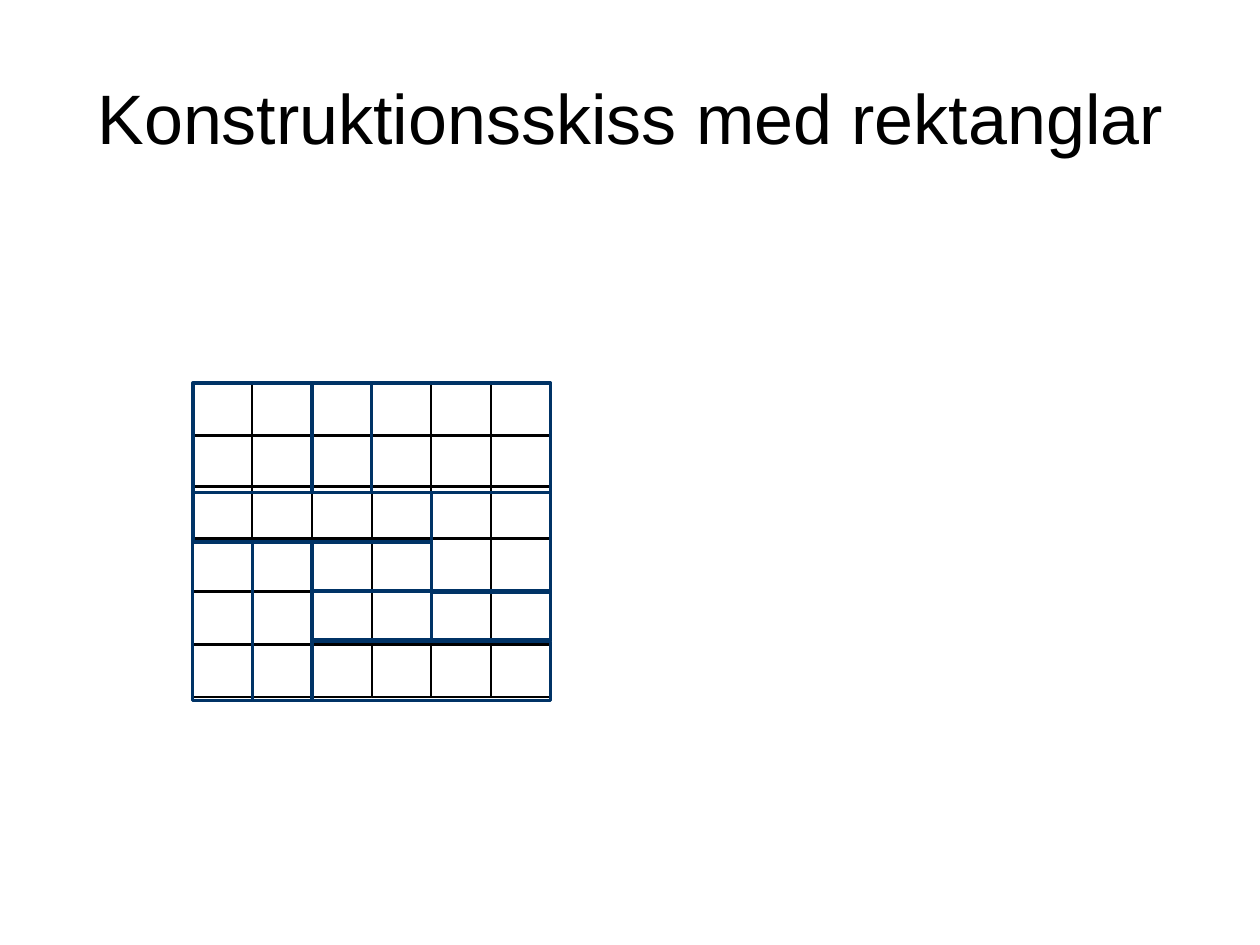
from pptx import Presentation
from pptx.dml.color import RGBColor
from pptx.enum import shapes, text
from pptx.util import Inches, Pt

LEFT = 1.53
COLUMNS = 6
COLUMN_WIDTH = 2.84 / COLUMNS
CELL_HEIGHT = 0.41
CELL_TOPS = (3.04, 3.46, 3.86, 4.28, 4.7, 5.12)

# first column, columns spanned, top, height
RECTANGLES = (
    (0, 2, 3.04, 0.87),
    (0, 4, 3.91, 0.39),
    (3, 3, 3.04, 0.87),
    (2, 1, 3.04, 0.87),
    (1, 1, 4.3, 1.26),
    (2, 4, 5.09, 0.47),
    (0, 1, 4.3, 1.26),
    (4, 2, 3.91, 0.79),
    (4, 2, 4.69, 0.39),
    (2, 2, 4.3, 0.39),
    (2, 2, 4.69, 0.39),
)


def color(value):
    return RGBColor.from_string(value)


class Sketch:
    ink = "000000"
    outline = "003366"
    title_font = {"name": "Arial", "size": Pt(40), "bold": False}

    def __init__(self, slide):
        self.slide = slide

    def title(self, wording):
        heading = self.slide.shapes.title
        place = {"left": 0.5, "top": 0.3, "width": 9, "height": 1.25}
        for side, length in place.items():
            setattr(heading, side, Inches(length))
        frame = heading.text_frame
        frame.text = wording
        frame.word_wrap = True
        frame.vertical_anchor = text.MSO_ANCHOR.MIDDLE
        paragraph = frame.paragraphs[0]
        paragraph.alignment = text.PP_ALIGN.CENTER
        font = paragraph.runs[0].font
        for attribute, value in self.title_font.items():
            setattr(font, attribute, value)
        font.color.rgb = color(self.ink)

    def rectangle(self, column, span, top, height, line_color, line_width):
        box = self.slide.shapes.add_shape(
            shapes.MSO_SHAPE.RECTANGLE,
            Inches(LEFT + column * COLUMN_WIDTH), Inches(top),
            Inches(span * COLUMN_WIDTH), Inches(height))
        box.shadow.inherit = False
        box.fill.background()
        box.line.color.rgb = color(line_color)
        box.line.width = Pt(line_width)

    def grid(self):
        for top in CELL_TOPS:
            for column in range(COLUMNS):
                self.rectangle(column, 1, top, CELL_HEIGHT, self.ink, 1)

    def rectangles(self):
        for column, span, top, height in RECTANGLES:
            self.rectangle(column, span, top, height, self.outline, 2)


def main():
    deck = Presentation()
    deck.slide_width, deck.slide_height = Inches(10), Inches(7.5)
    sketch = Sketch(deck.slides.add_slide(deck.slide_layouts[5]))
    sketch.title("Konstruktionsskiss med rektanglar")
    sketch.grid()
    sketch.rectangles()
    deck.save("out.pptx")


if __name__ == "__main__":
    main()
